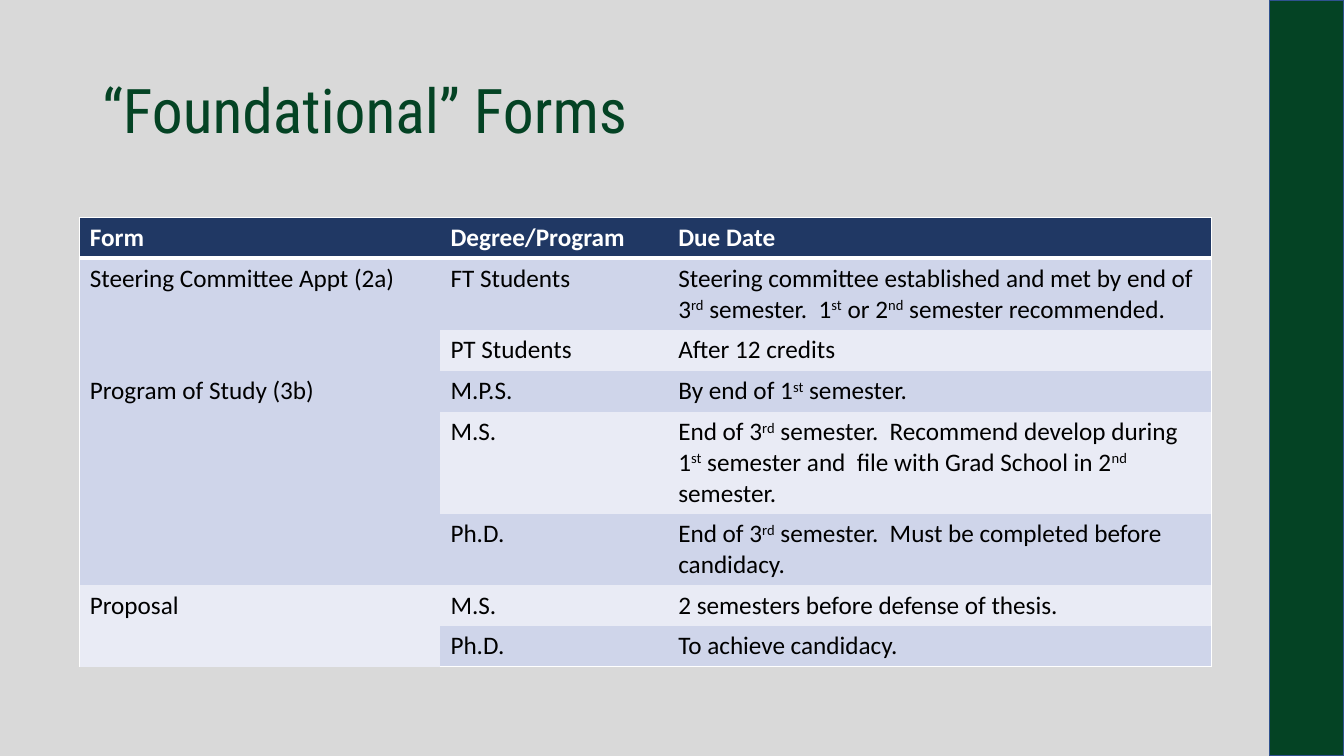
from lxml import etree
from pptx import Presentation
from pptx.dml.color import RGBColor as Rgb
from pptx.enum.shapes import MSO_SHAPE as Shape
from pptx.enum.text import MSO_ANCHOR as Anchor
from pptx.oxml.ns import qn
from pptx.util import Cm, Pt

INK = {
    "back": "D9D9D9", "green": "044324", "edge": "2F528F", "head": "203864",
    "dark": "CFD5EA", "light": "E9EBF5", "white": "FFFFFF", "black": "000000",
}
# Carets enclose superscripts; the last item is the number of lines.
ROWS = [
    ("Form", "Degree/Program", "Due Date", 1),
    ("Steering Committee Appt (2a)", "FT Students",
     "Steering committee established and met by end of 3^rd^ semester.  "
     "1^st^ or 2^nd^ semester recommended.", 2),
    ("", "PT Students", "After 12 credits", 1),
    ("Program of Study (3b)", "M.P.S.", "By end of 1^st^ semester.", 1),
    ("", "M.S.",
     "End of 3^rd^ semester.  Recommend develop during 1^st^ semester and  "
     "file with Grad School in 2^nd^ semester.", 3),
    ("", "Ph.D.",
     "End of 3^rd^ semester.  Must be completed before candidacy.", 2),
    ("Proposal", "M.S.", "2 semesters before defense of thesis.", 1),
    ("", "Ph.D.", "To achieve candidacy.", 1),
]
SPANS = [(1, 2), (3, 5), (6, 7)]
COLS = (9.09, 5.74, 13.69)


def tint(name):
    return Rgb.from_string(INK[name])


def paint(fill, name):
    fill.solid()
    fill.fore_color.rgb = tint(name)


def style(font, name, size, color, bold=False):
    font.name, font.size, font.bold = name, Pt(size), bold
    font.color.rgb = tint(color)


def write(para, text):
    """Add runs, raising the parts between carets."""
    for i, part in enumerate(text.split("^")):
        if part:
            run = para.add_run()
            run.text = part
            if i % 2:
                run._r.get_or_add_rPr().set("baseline", "30000")


def rule(cell, widths):
    """Set left, right, top and bottom borders in points; 0 hides one."""
    props = cell._tc.get_or_add_tcPr()
    for i, (side, width) in enumerate(zip("LRTB", widths)):
        line = etree.Element(qn(f"a:ln{side}"), w=str(Pt(width)))
        if width:
            fill = etree.SubElement(line, qn("a:solidFill"))
            etree.SubElement(fill, qn("a:srgbClr"), val=INK["white"])
        else:
            etree.SubElement(line, qn("a:noFill"))
        props.insert(i, line)


def add_title(slide, x, y, w, h):
    frame = slide.shapes.add_textbox(Cm(x), Cm(y), Cm(w), Cm(h)).text_frame
    frame.word_wrap = True
    frame.vertical_anchor = Anchor.MIDDLE
    para = frame.paragraphs[0]
    para.line_spacing = 0.9
    write(para, "“Foundational” Forms")
    style(para.font, "Roboto Condensed", 44, "green")


def add_forms(slide, x, y):
    highs = [0.26 + 0.77 * row[-1] for row in ROWS]
    grid = slide.shapes.add_table(
        len(ROWS), len(COLS), Cm(x), Cm(y), Cm(sum(COLS)), Cm(sum(highs))
    ).table
    for col, wide in zip(grid.columns, COLS):
        col.width = Cm(wide)
    last, end = len(ROWS) - 1, len(COLS) - 1
    for r, (*texts, _) in enumerate(ROWS):
        grid.rows[r].height = Cm(highs[r])
        band = "dark" if r % 2 else "light"
        for c, text in enumerate(texts):
            cell = grid.cell(r, c)
            paint(cell.fill, band if r else "head")
            top = {0: 1, 1: 3}.get(r, 0)
            base = {0: 3, last: 1}.get(r, 0)
            rule(cell, (int(c == 0), int(c == end), top, base))
            para = cell.text_frame.paragraphs[0]
            write(para, text)
            style(para.font, "Calibri", 18, "black" if r else "white", r == 0)
    for first, final in SPANS:
        grid.cell(first, 0).merge(grid.cell(final, 0))


def add_bar(slide, x, y, w, h):
    bar = slide.shapes.add_shape(Shape.RECTANGLE, Cm(x), Cm(y), Cm(w), Cm(h))
    bar.shadow.inherit = False
    paint(bar.fill, "green")
    bar.line.color.rgb = tint("edge")
    bar.line.width = Pt(1)


def main():
    deck = Presentation()
    deck.slide_width, deck.slide_height = Cm(33.87), Cm(19.05)
    slide = deck.slides.add_slide(deck.slide_layouts[6])
    paint(slide.background.fill, "back")
    add_title(slide, 2.33, 1.01, 29.21, 3.68)
    add_forms(slide, 2.01, 5.48)
    add_bar(slide, 32, 0, 1.87, 19.05)
    deck.save("out.pptx")


if __name__ == "__main__":
    main()
